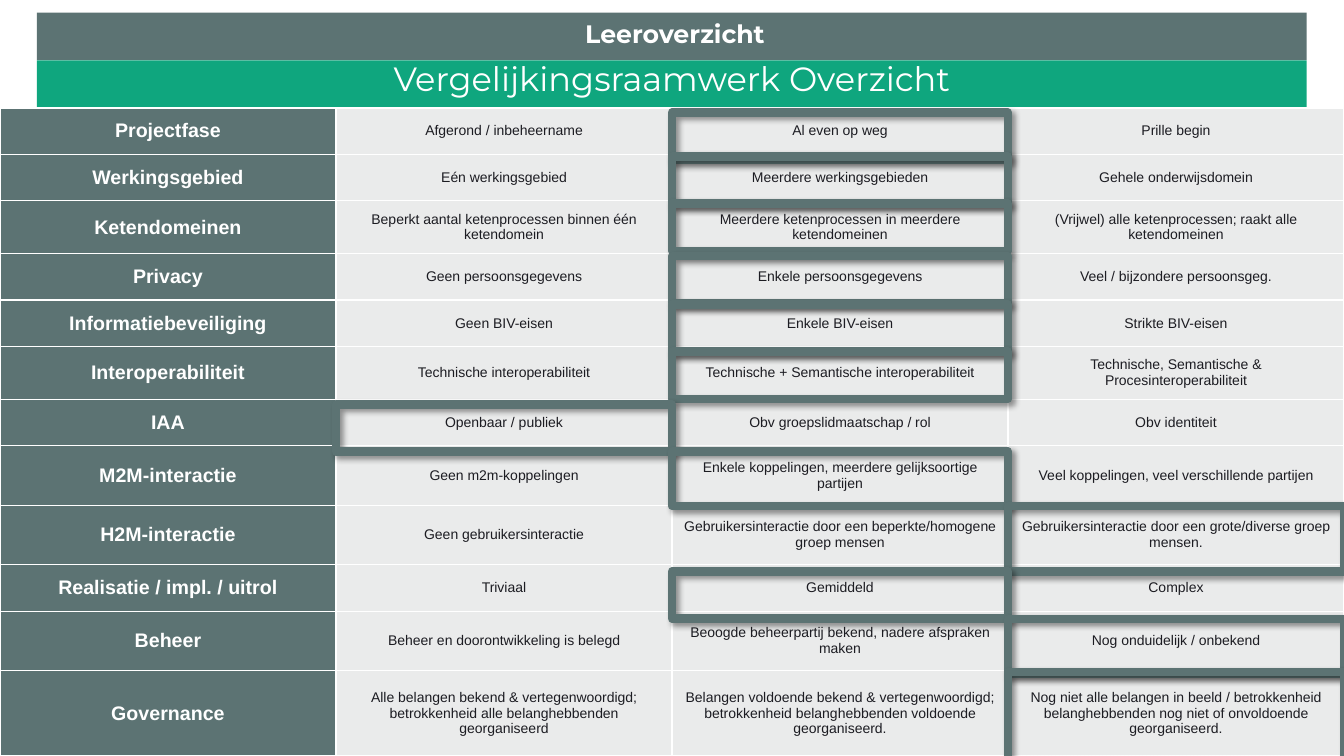
from pptx import Presentation
from pptx.dml.color import RGBColor
from pptx.enum.shapes import MSO_SHAPE as Shape
from pptx.enum.text import MSO_ANCHOR as Anchor, MSO_AUTO_SIZE as AutoSize, PP_ALIGN as Align
from pptx.oxml import parse_xml
from pptx.oxml.ns import nsdecls, qn
from pptx.util import Cm, Pt

BANNER = "Leeroverzicht"
TITLE = "Vergelijkingsraamwerk Overzicht"

# row height, aspect, three options
ASPECTS = [
    (1.17, "Projectfase", "Afgerond / inbeheername", "Al even op weg", "Prille begin"),
    (1.17, "Werkingsgebied", "Eén werkingsgebied", "Meerdere werkingsgebieden", "Gehele onderwijsdomein"),
    (1.33, "Ketendomeinen", "Beperkt aantal ketenprocessen binnen één ketendomein",
     "Meerdere ketenprocessen in meerdere ketendomeinen",
     "(Vrijwel) alle ketenprocessen; raakt alle ketendomeinen"),
    (1.17, "Privacy", "Geen persoonsgegevens", "Enkele persoonsgegevens", "Veel / bijzondere persoonsgeg."),
    (1.17, "Informatiebeveiliging", "Geen BIV-eisen", "Enkele BIV-eisen", "Strikte BIV-eisen"),
    (1.33, "Interoperabiliteit", "Technische interoperabiliteit",
     "Technische + Semantische interoperabiliteit",
     "Technische, Semantische & Procesinteroperabiliteit"),
    (1.17, "IAA", "Openbaar / publiek", "Obv groepslidmaatschap / rol", "Obv identiteit"),
    (1.5, "M2M-interactie", "Geen m2m-koppelingen",
     "Enkele koppelingen, meerdere gelijksoortige partijen",
     "Veel koppelingen, veel verschillende partijen"),
    (1.5, "H2M-interactie", "Geen gebruikersinteractie",
     "Gebruikersinteractie door een beperkte/homogene groep mensen",
     "Gebruikersinteractie door een grote/diverse groep mensen."),
    (1.17, "Realisatie / impl. / uitrol", "Triviaal", "Gemiddeld", "Complex"),
    (1.5, "Beheer", "Beheer en doorontwikkeling is belegd",
     "Beoogde beheerpartij bekend, nadere afspraken maken", "Nog onduidelijk / onbekend"),
    (2.15, "Governance",
     "Alle belangen bekend & vertegenwoordigd; betrokkenheid alle belanghebbenden georganiseerd",
     "Belangen voldoende bekend & vertegenwoordigd; betrokkenheid belanghebbenden voldoende georganiseerd.",
     "Nog niet alle belangen in beeld / betrokkenheid belanghebbenden nog niet of onvoldoende georganiseerd."),
]

# chosen option per aspect: column, top, height
CHOICES = [
    (2, 2.84, 1.19), (2, 3.94, 1.19), (2, 5.13, 1.19), (2, 6.45, 1.19),
    (2, 7.67, 1.19), (2, 8.86, 1.19), (1, 10.19, 1.19), (2, 11.38, 1.37),
    (3, 12.75, 1.65), (2, 14.4, 1.19), (3, 15.6, 1.37), (3, 16.94, 2.24),
]

THEME = {
    "slate": "5C7373", "green": "0FA67E", "pale": "EAEBEB", "white": "FFFFFF",
    "banner": {"name": "Montserrat", "size": Pt(18), "bold": True, "color": "FFFFFF"},
    "title": {"name": "Montserrat", "size": Pt(24), "bold": False, "color": "FFFFFF"},
    "aspect": {"name": "Arial", "size": Pt(14), "bold": True, "color": "FFFFFF"},
    "option": {"name": "Arial", "size": Pt(10), "bold": False, "color": "1C1C22"},
    "frame": Pt(6),
}
SLIDE_WIDTH, SLIDE_HEIGHT = 33.87, 19.05
COLUMNS = 4
COLUMN_WIDTH = SLIDE_WIDTH / COLUMNS
TABLE_TOP = 2.72
INSET = Cm(0.25)


def paint(fill, color):
    fill.solid()
    fill.fore_color.rgb = RGBColor.from_string(color)


def write(text_frame, text, style):
    paragraph = text_frame.paragraphs[0]
    paragraph.alignment = Align.CENTER
    run = paragraph.add_run()
    run.text = text
    for key, value in style.items():
        if key == "color":
            run.font.color.rgb = RGBColor.from_string(value)
        else:
            setattr(run.font, key, value)


def set_insets(target, left=INSET):
    """Give a text frame or a table cell its inner margins."""
    for side in ("top", "right", "bottom"):
        setattr(target, f"margin_{side}", INSET)
    target.margin_left = left


def add_bar(slide, top, color):
    bar = slide.shapes.add_shape(Shape.RECTANGLE, Cm(0.93), Cm(top), Cm(32), Cm(1.2))
    bar.shadow.inherit = False
    paint(bar.fill, color)
    bar.line.fill.background()
    return bar


def add_heading(shape, text, style, anchor, left=INSET):
    frame = shape.text_frame
    frame.word_wrap = True
    frame.auto_size = AutoSize.NONE
    frame.vertical_anchor = anchor
    set_insets(frame, left)
    write(frame, text, style)


def fill_cell(cell, text, style, color):
    cell.vertical_anchor = Anchor.MIDDLE
    set_insets(cell)
    write(cell.text_frame, text, style)
    properties = cell._tc.get_or_add_tcPr()
    for side in "LRTB":
        properties.append(parse_xml(
            f'<a:ln{side} {nsdecls("a")} w="12700"><a:solidFill>'
            f'<a:srgbClr val="{THEME["white"]}"/></a:solidFill></a:ln{side}>'))
    paint(cell.fill, color)


def add_comparison(slide):
    height = sum(aspect[0] for aspect in ASPECTS)
    table = slide.shapes.add_table(len(ASPECTS), COLUMNS, 0, Cm(TABLE_TOP),
                                   Cm(SLIDE_WIDTH), Cm(height)).table
    table.first_row = table.horz_banding = False
    for column in table.columns:
        column.width = Cm(COLUMN_WIDTH)
    for row, (row_height, *texts) in zip(table.rows, ASPECTS):
        row.height = Cm(row_height)
        for index, (cell, text) in enumerate(zip(row.cells, texts)):
            kind, color = ("option", "pale") if index else ("aspect", "slate")
            fill_cell(cell, text, THEME[kind], THEME[color])


def add_choice_frame(slide, column, top, height):
    frame = slide.shapes.add_shape(Shape.RECTANGLE, Cm(column * COLUMN_WIDTH), Cm(top),
                                   Cm(COLUMN_WIDTH), Cm(height))
    frame.fill.background()
    frame.line.width = THEME["frame"]
    paint(frame.line.fill, THEME["slate"])
    frame.shadow.inherit = False
    properties = frame._element.spPr
    properties.find(qn("a:ln")).append(parse_xml(f'<a:round {nsdecls("a")}/>'))
    properties.find(qn("a:effectLst")).append(parse_xml(
        f'<a:outerShdw {nsdecls("a")} blurRad="50800" dist="38100" dir="2700000" algn="tl" '
        'rotWithShape="0"><a:srgbClr val="000000"><a:alpha val="40000"/></a:srgbClr></a:outerShdw>'))


def main():
    presentation = Presentation()
    presentation.slide_width = Cm(SLIDE_WIDTH)
    presentation.slide_height = Cm(SLIDE_HEIGHT)
    slide = presentation.slides.add_slide(presentation.slide_layouts[6])

    add_bar(slide, 0.32, THEME["slate"])
    title = add_bar(slide, 1.52, THEME["green"])
    add_heading(title, TITLE, THEME["title"], Anchor.BOTTOM)
    banner = slide.shapes.add_textbox(Cm(1.3), Cm(0.18), Cm(31.27), Cm(1.35))
    add_heading(banner, BANNER, THEME["banner"], Anchor.MIDDLE, left=Cm(0.4))

    add_comparison(slide)
    for choice in CHOICES:
        add_choice_frame(slide, *choice)
    presentation.save("out.pptx")


if __name__ == "__main__":
    main()
